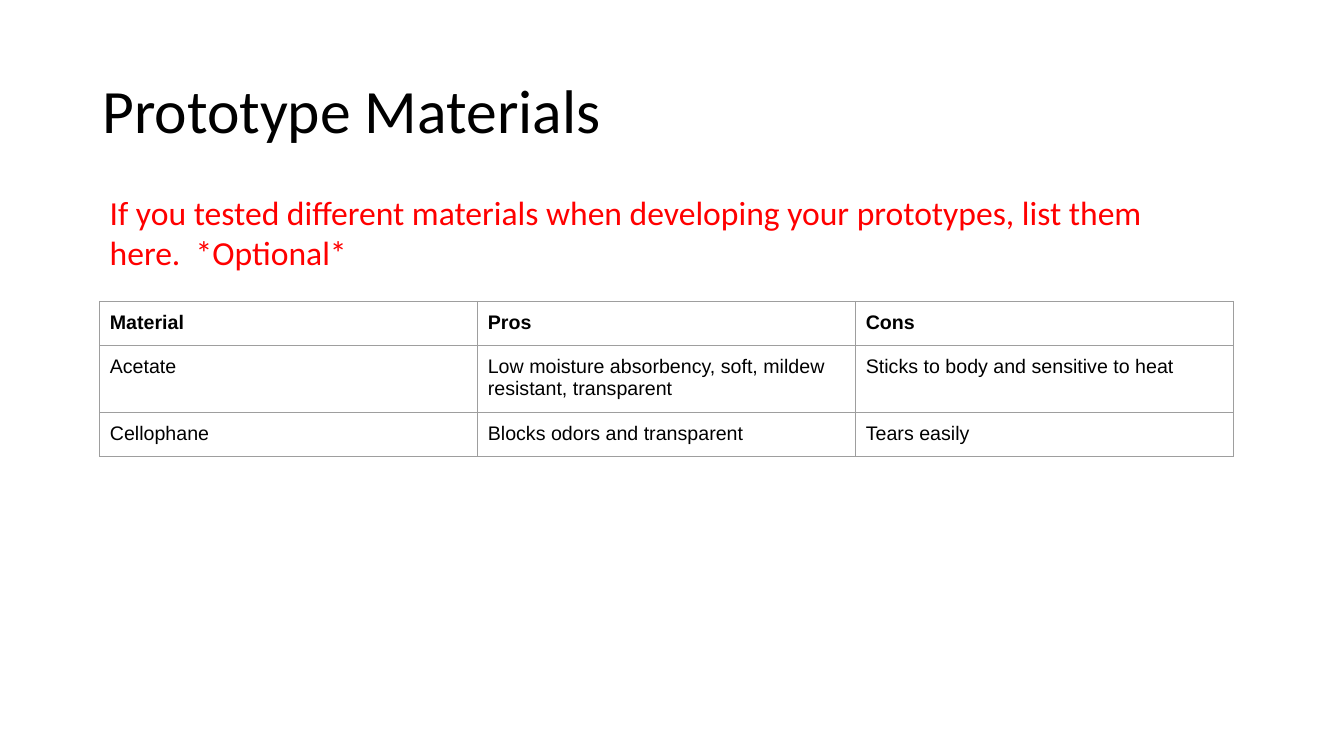
from lxml.etree import SubElement
from pptx import Presentation
from pptx.dml.color import RGBColor
from pptx.enum.text import MSO_ANCHOR
from pptx.oxml.ns import qn
from pptx.util import Pt


def color(hex_text):
    return RGBColor.from_string(hex_text)


class MaterialsSlide:
    heading_font = "Calibri"
    table_font = "Arial"
    ink = "000000"
    hint = "FF0000"
    grid = "9E9E9E"
    grid_width = 0.75
    cell_margin = 7.2

    def __init__(self, deck):
        self.page = deck.slides.add_slide(deck.slide_layouts[6])

    def add_span(self, para, text, font, size, ink, bold=False):
        span = para.add_run()
        span.text = text
        span.font.name = font
        span.font.size = Pt(size)
        span.font.bold = bold
        span.font.color.rgb = color(ink)

    def add_text(self, text, left, top, width, height, size, ink,
                 anchor=MSO_ANCHOR.TOP, line_spacing=1.0):
        box = self.page.shapes.add_textbox(Pt(left), Pt(top), Pt(width), Pt(height))
        frame = box.text_frame
        frame.word_wrap = True
        frame.vertical_anchor = anchor
        para = frame.paragraphs[0]
        para.line_spacing = line_spacing
        self.add_span(para, text, self.heading_font, size, ink)

    def add_borders(self, cell):
        properties = cell._tc.get_or_add_tcPr()
        for side in ("a:lnL", "a:lnR", "a:lnT", "a:lnB"):
            line = SubElement(properties, qn(side), w=str(Pt(self.grid_width)))
            fill = SubElement(line, qn("a:solidFill"))
            SubElement(fill, qn("a:srgbClr"), val=self.grid)

    def add_table(self, rows, left, top, column_width, row_height, size):
        columns = len(rows[0])
        table = self.page.shapes.add_table(
            len(rows), columns, Pt(left), Pt(top),
            Pt(columns * column_width), Pt(len(rows) * row_height)).table
        table.first_row = False
        table.horz_banding = False
        for column in table.columns:
            column.width = Pt(column_width)
        for row_index, texts in enumerate(rows):
            table.rows[row_index].height = Pt(row_height)
            for column_index, text in enumerate(texts):
                cell = table.cell(row_index, column_index)
                cell.margin_left = cell.margin_right = Pt(self.cell_margin)
                cell.margin_top = cell.margin_bottom = Pt(self.cell_margin)
                # Borders come before the fill in the cell properties
                self.add_borders(cell)
                cell.fill.background()
                self.add_span(cell.text_frame.paragraphs[0], text, self.table_font,
                              size, self.ink, bold=row_index == 0)


def main():
    deck = Presentation()
    deck.slide_width, deck.slide_height = Pt(960), Pt(540)
    slide = MaterialsSlide(deck)

    # Title
    slide.add_text("Prototype Materials", 66, 28.75, 828, 104.4, 44, slide.ink,
                   anchor=MSO_ANCHOR.MIDDLE, line_spacing=0.9)

    # Instruction
    slide.add_text("If you tested different materials when developing your prototypes, "
                   "list them here.  *Optional*",
                   71.25, 133.2, 785.5, 91.4, 24, slide.hint)

    # Comparison of materials
    materials = [
        ("Material", "Pros", "Cons"),
        ("Acetate", "Low moisture absorbency, soft, mildew resistant, transparent",
         "Sticks to body and sensitive to heat"),
        ("Cellophane", "Blocks odors and transparent", "Tears easily"),
    ]
    slide.add_table(materials, 71.25, 215.3, 270, 30.25, 14)

    deck.save("out.pptx")


if __name__ == "__main__":
    main()
